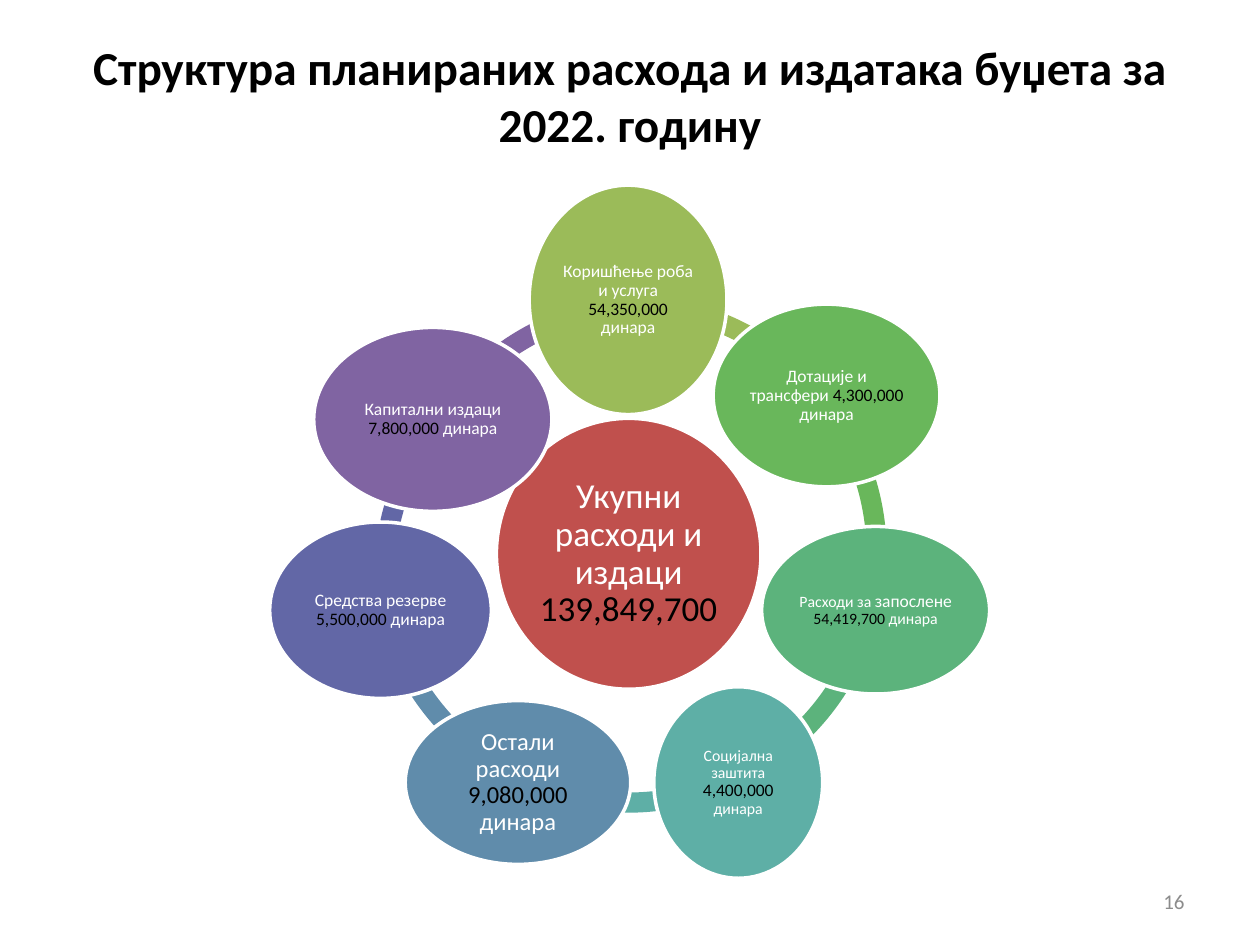
"""Build the slide on the structure of planned budget expenditure for 2022."""
from dataclasses import dataclass
from math import cos, radians, sin

from pptx import Presentation
from pptx.dml.color import RGBColor
from pptx.enum.shapes import MSO_SHAPE
from pptx.enum.text import MSO_ANCHOR, PP_ALIGN
from pptx.util import Inches, Pt

COLOURS = {
    "black": "000000", "white": "FFFFFF", "grey": "8C8C8C", "red": "C0504D",
    "lime": "9BBB59", "green": "69B75B", "emerald": "5CB37C", "teal": "5EAFA6",
    "blue": "608CAB", "indigo": "6267A6", "purple": "8064A2",
}
FONT = "Calibri"
COLUMNS = 100
CENTRE = (49.85, 43.95)
ORBIT = 20.15
RING_SIZE = 41.1
RING_WIDTH = 0.039
STEP = 360 / 7
TOP = 270

presentation = Presentation()
presentation.slide_width, presentation.slide_height = Inches(10), Inches(7.5)
slide = presentation.slides.add_slide(presentation.slide_layouts[6])


@dataclass(frozen=True)
class Phrase:
    text: str
    size: float
    colour: str = "white"
    bold: bool = False


@dataclass(frozen=True)
class Bubble:
    colour: str
    width: float
    height: float
    phrases: tuple[Phrase, ...]
    shift: tuple[float, float] = (0, 0)
    inset: float = 0.1


@dataclass(frozen=True)
class Arc:
    colour: str
    start: float
    end: float
    shift: tuple[float, float] = (-0.02, 0)


def grid(*cells: float) -> list[int]:
    """Convert grid cells to slide lengths."""
    return [round(cell * presentation.slide_width / COLUMNS) for cell in cells]


def colour_of(name: str) -> RGBColor:
    """Look up a colour by its name."""
    return RGBColor.from_string(COLOURS[name])


def set_attributes(target: object, values: dict[str, object]) -> None:
    """Set every attribute in the dict."""
    for name, value in values.items():
        setattr(target, name, value)


def write(shape, phrases: tuple[Phrase, ...], alignment=PP_ALIGN.CENTER,
          spacing: float = 1.0, inset: float | None = None) -> None:
    """Write one paragraph of phrases into a shape."""
    frame = shape.text_frame
    set_attributes(frame, {"word_wrap": True, "vertical_anchor": MSO_ANCHOR.MIDDLE})
    if inset is not None:
        margin = grid(inset)[0]
        set_attributes(frame, {f"margin_{side}": margin
                               for side in ("left", "top", "right", "bottom")})
    paragraph = frame.paragraphs[0]
    set_attributes(paragraph, {"alignment": alignment, "line_spacing": spacing})
    for phrase in phrases:
        run = paragraph.add_run()
        run.text = phrase.text
        set_attributes(run.font, {"name": FONT, "size": Pt(phrase.size), "bold": phrase.bold})
        run.font.color.rgb = colour_of(phrase.colour)


def add_filled(kind: MSO_SHAPE, centre: tuple[float, float], width: float,
               height: float, colour: str):
    """Add a flat preset shape around its centre."""
    left, top = centre[0] - width / 2, centre[1] - height / 2
    shape = slide.shapes.add_shape(kind, *grid(left, top, width, height))
    shape.shadow.inherit = False
    shape.fill.solid()
    shape.fill.fore_color.rgb = colour_of(colour)
    return shape


def shifted(point: tuple[float, float], shift: tuple[float, float]) -> tuple[float, float]:
    """Move a point by a shift."""
    return point[0] + shift[0], point[1] + shift[1]


def add_arc(arc: Arc) -> None:
    """Add one section of the ring."""
    shape = add_filled(MSO_SHAPE.BLOCK_ARC, shifted(CENTRE, arc.shift),
                       RING_SIZE, RING_SIZE, arc.colour)
    shape.line.fill.background()
    for index, value in enumerate((arc.start % 360 * 0.6, arc.end % 360 * 0.6, RING_WIDTH)):
        shape.adjustments[index] = value


def add_bubble(bubble: Bubble, centre: tuple[float, float]) -> None:
    """Add an outlined ellipse with its label."""
    shape = add_filled(MSO_SHAPE.OVAL, shifted(centre, bubble.shift),
                       bubble.width, bubble.height, bubble.colour)
    shape.line.color.rgb = colour_of("white")
    shape.line.width = Pt(2)
    write(shape, bubble.phrases, spacing=0.9, inset=bubble.inset)


def add_text(left: float, top: float, width: float, height: float,
             phrase: Phrase, alignment=PP_ALIGN.CENTER) -> None:
    """Add a text box with one phrase."""
    write(slide.shapes.add_textbox(*grid(left, top, width, height)), (phrase,), alignment)


def amount(name: str, value: str, size: float = 10) -> tuple[Phrase, ...]:
    """Compose a label of a name, a value and the currency."""
    return Phrase(f"{name} ", size), Phrase(f"{value} ", size, "black"), Phrase("динара", size)


TOTAL = Bubble("red", 21, 21.5, (Phrase("Укупни расходи и издаци ", 20),
                                 Phrase("139,849,700", 20, "black")), (0.05, 0), 0.3)
BUBBLES = (
    Bubble("lime", 15.7, 18.2, amount("Коришћење роба и услуга", "54,350,000")),
    Bubble("green", 18, 14.5, amount("Дотације и трансфери", "4,300,000")),
    Bubble("emerald", 18.1, 13.3, (
        Phrase("Расходи за ", 9), Phrase("запослене", 10), Phrase(" ", 9),
        Phrase("54,419,700 ", 9, "black"), Phrase("динара", 9))),
    Bubble("teal", 13.4, 15.2, (
        Phrase("Социјална заштита ", 9), Phrase("4,400,000 ", 10, "black"),
        Phrase("динара", 9))),
    Bubble("blue", 17.9, 13, amount("Остали расходи", "9,080,000", 14), inset=0.2),
    Bubble("indigo", 17.6, 14, amount("Средства резерве", "5,500,000")),
    Bubble("purple", 18.9, 14.6, amount("Капитални издаци", "7,800,000"), (0.25, 1.9)),
)
SHIFTED_ARCS = (
    Arc("purple", 211.65, 265.35, (1.7, 0)),
    Arc("indigo", 172.37, 218.16, (0.4, 1.8)),
)


def main() -> None:
    """Draw the slide and save it."""
    add_text(5, 2.9, 90, 9.3, Phrase(
        "Структура планираних расхода и издатака буџета за 2022. годину", 27, "black", True))
    angles = [TOP + index * STEP for index in range(len(BUBBLES))]
    regular_arcs = [Arc(bubble.colour, angle, angle + STEP)
                    for bubble, angle in zip(BUBBLES[:5], angles)]
    for arc in (*SHIFTED_ARCS, *reversed(regular_arcs)):
        add_arc(arc)
    add_bubble(TOTAL, CENTRE)
    for bubble, angle in zip(BUBBLES, angles):
        direction = radians(angle)
        add_bubble(bubble, shifted(CENTRE, (ORBIT * cos(direction), ORBIT * sin(direction))))
    add_text(71.7, 69.5, 23.3, 4, Phrase("16", 12, "grey"), PP_ALIGN.RIGHT)
    presentation.save("out.pptx")


if __name__ == "__main__":
    main()
